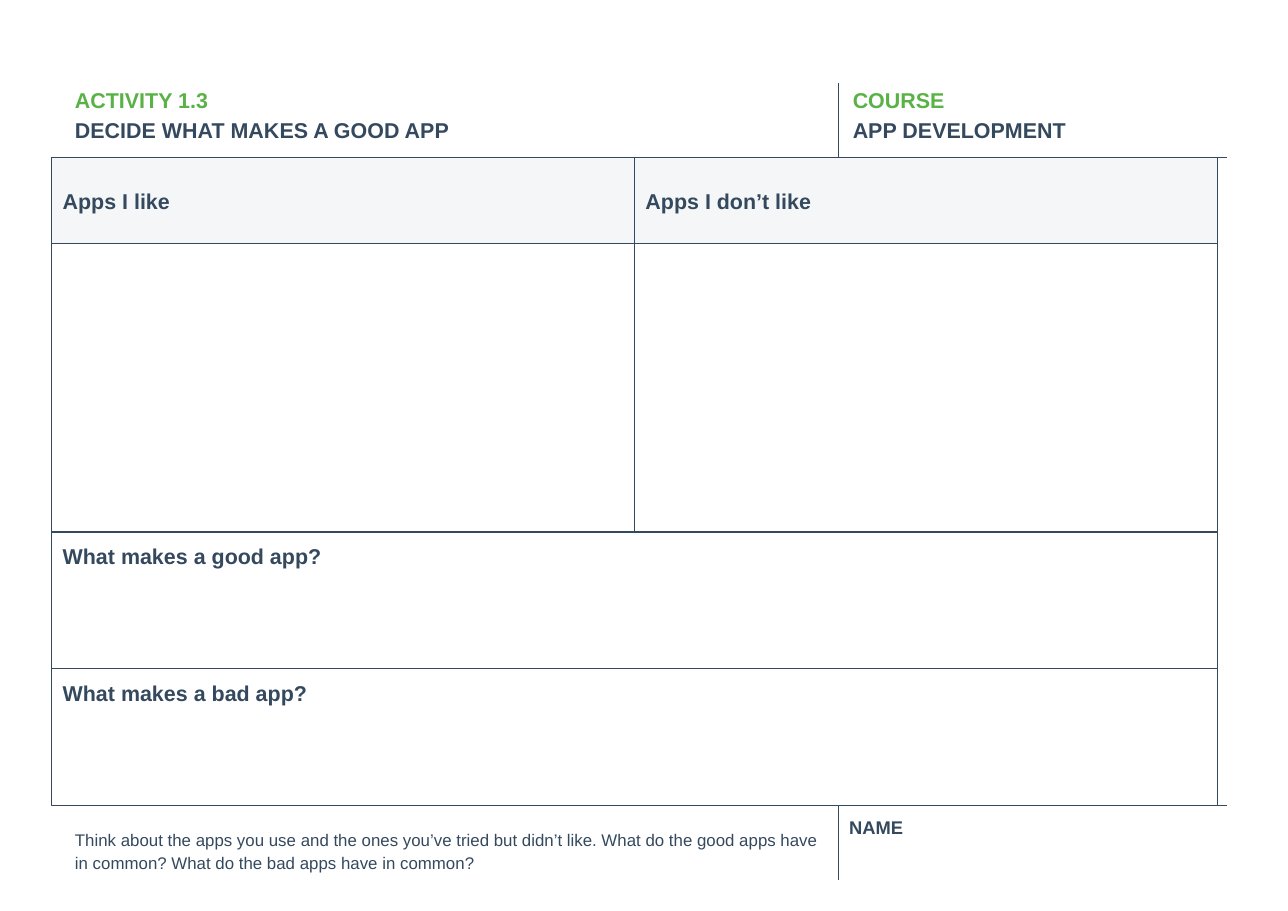
"""Build the worksheet slide for Activity 1.3 on judging apps."""
from lxml.etree import SubElement
from pptx import Presentation
from pptx.dml.color import RGBColor
from pptx.enum.shapes import MSO_CONNECTOR, MSO_SHAPE
from pptx.enum.text import MSO_ANCHOR, MSO_AUTO_SIZE, PP_ALIGN
from pptx.oxml.ns import qn
from pptx.util import Inches, Pt

NAVY, GREEN, PALE = "34495E", "59B246", "F5F6F7"
LEFT, MIDDLE, RIGHT = 0.55, 7.61, 11.14
TOP_RULE, BOTTOM_RULE = 1.43, 7.31
BAND, TICK = 0.81, 0.68
GRID_LEFT, COLUMN = 0.47, 5.29
ROW_TOPS = [TOP_RULE, 2.21, 4.83, 6.07, BOTTOM_RULE]


def rgb(hex_string):
    return RGBColor.from_string(hex_string)


def write(host, lines, size, bold=True, anchor=MSO_ANCHOR.TOP, inset=0.1, spacing=None):
    frame = host.text_frame
    frame.word_wrap = True
    frame.auto_size = MSO_AUTO_SIZE.NONE
    frame.vertical_anchor = anchor
    frame.margin_left = frame.margin_right = Inches(inset)
    frame.margin_top = frame.margin_bottom = Inches(inset)
    for index, (words, color) in enumerate(lines):
        paragraph = frame.add_paragraph() if index else frame.paragraphs[0]
        paragraph.alignment = PP_ALIGN.LEFT
        paragraph.space_before = Pt(0)
        if spacing:
            paragraph.line_spacing = spacing
        properties = paragraph._p.get_or_add_pPr()
        properties.set("marL", "0")
        properties.set("indent", "0")
        SubElement(properties, qn("a:buNone"))
        run = paragraph.add_run()
        run.text = words
        run.font.name = "Arial"
        run.font.size = Pt(size)
        run.font.bold = bold
        run.font.color.rgb = rgb(color)


deck = Presentation()
deck.slide_width, deck.slide_height = Inches(11.69), Inches(8.27)
slide = deck.slides.add_slide(deck.slide_layouts.get_by_name("Two Content"))
activity, course, prompt = slide.placeholders

name_label = slide.shapes.add_textbox(
    Inches(MIDDLE), Inches(BOTTOM_RULE), Inches(RIGHT - MIDDLE), Inches(BAND))
write(name_label, [("NAME", NAVY)], 12)

for x1, y1, x2, y2 in [
    (LEFT, TOP_RULE, RIGHT, TOP_RULE),
    (LEFT, BOTTOM_RULE, RIGHT, BOTTOM_RULE),
    (MIDDLE, BOTTOM_RULE, MIDDLE, BOTTOM_RULE + TICK),
    (MIDDLE, TOP_RULE - TICK, MIDDLE, TOP_RULE),
]:
    rule = slide.shapes.add_connector(
        MSO_CONNECTOR.STRAIGHT, Inches(x1), Inches(y1), Inches(x2), Inches(y2))
    rule.line.color.rgb = rgb(NAVY)
    rule.line.width = Pt(0.75)
    SubElement(rule._element.spPr, qn("a:effectLst"))

for band, left, top, right, lines, size, bold in [
    (activity, LEFT, TOP_RULE - BAND, MIDDLE,
     [("ACTIVITY 1.3", GREEN), ("DECIDE WHAT MAKES A GOOD APP", NAVY)], 14, True),
    (course, MIDDLE, TOP_RULE - BAND, RIGHT,
     [("COURSE", GREEN), ("APP DEVELOPMENT", NAVY)], 14, True),
    (prompt, LEFT, BOTTOM_RULE, MIDDLE,
     [("Think about the apps you use and the ones you’ve tried but didn’t like. "
       "What do the good apps have in common? What do the bad apps have in common?", NAVY)],
     11, False),
]:
    band.left, band.top = Inches(left), Inches(top)
    band.width, band.height = Inches(right - left), Inches(BAND)
    write(band, lines, size, bold, MSO_ANCHOR.MIDDLE, 0.13, 1.15)

for row, column, span, question, fill in [
    (1, 0, 1, None, None),
    (1, 1, 1, None, None),
    (3, 0, 2, "What makes a bad app?", None),
    (0, 1, 1, "Apps I don’t like", PALE),
    (0, 0, 1, "Apps I like", PALE),
    (2, 0, 2, "What makes a good app?", None),
]:
    cell = slide.shapes.add_shape(
        MSO_SHAPE.RECTANGLE,
        Inches(GRID_LEFT + column * COLUMN), Inches(ROW_TOPS[row]),
        Inches(span * COLUMN), Inches(ROW_TOPS[row + 1] - ROW_TOPS[row]))
    cell.shadow.inherit = False
    cell.line.color.rgb = rgb(NAVY)
    cell.line.width = Pt(0.75)
    if fill:
        cell.fill.solid()
        cell.fill.fore_color.rgb = rgb(fill)
    else:
        cell.fill.background()
    if question:
        write(cell, [(question, NAVY)], 14,
              anchor=MSO_ANCHOR.MIDDLE if fill else MSO_ANCHOR.TOP)

deck.save("out.pptx")
